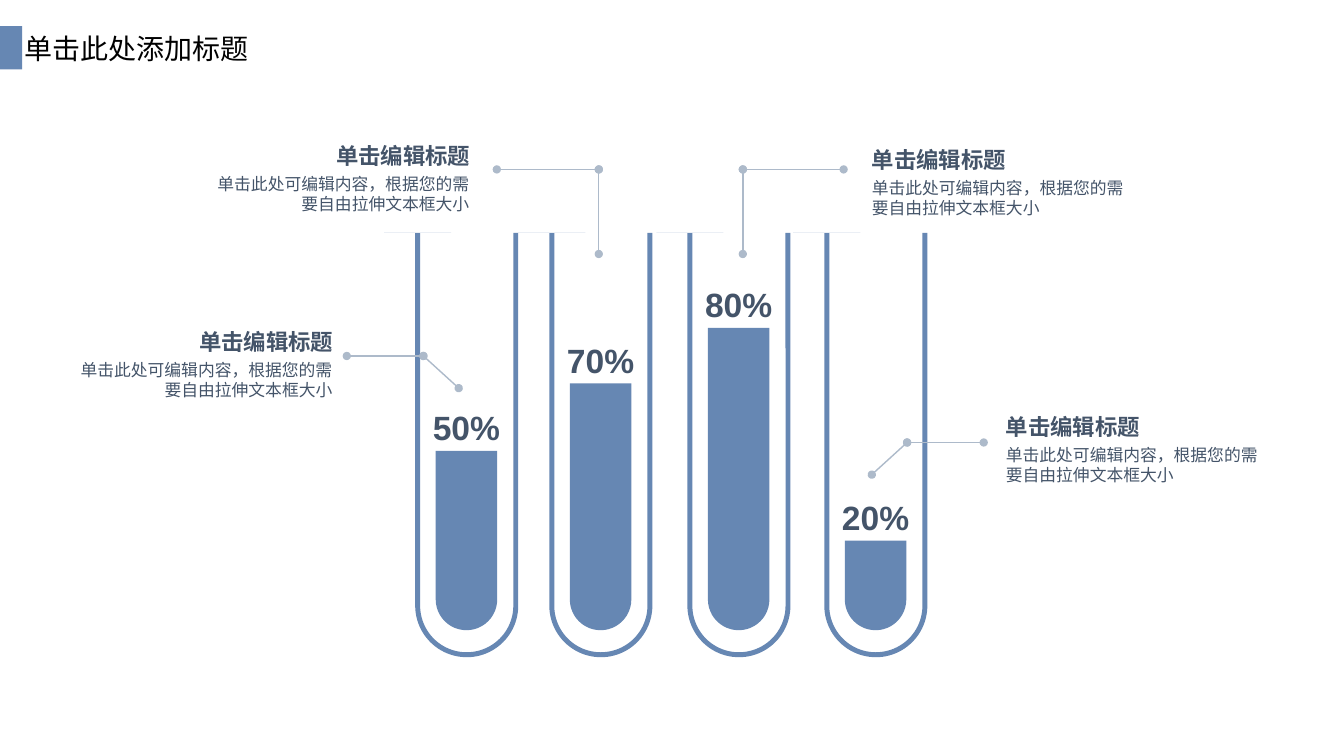
"""Build a slide of four test tubes with percentage levels and callouts."""
import itertools

import lxml.etree
import pptx
import pptx.dml.color
import pptx.enum.shapes
import pptx.enum.text
import pptx.oxml.ns
import pptx.util

Cm = pptx.util.Cm
Pt = pptx.util.Pt
Shape = pptx.enum.shapes.MSO_SHAPE
Align = pptx.enum.text.PP_ALIGN
Anchor = pptx.enum.text.MSO_ANCHOR
qn = pptx.oxml.ns.qn

BLUE, SLATE, GREY, BLACK = "6687B3", "445469", "ADBACA", "000000"
HEADING = "单击编辑标题"
DETAIL = "单击此处可编辑内容，根据您的需要自由拉伸文本框大小"
TUBE_TOP, TUBE_WIDTH, TUBE_HEIGHT = 5.87, 3.38, 10.69
LIQUID_BOTTOM = 15.88

TUBES = [
    (9.68, 4.52, "50%"),
    (13.06, 6.22, "70%"),
    (16.54, 7.62, "80%"),
    (19.99, 2.26, "20%"),
]
CALLOUTS = [
    (1.9, 8.26, Align.RIGHT, [(11.56, 9.78), (10.67, 8.97), (8.74, 8.97)]),
    (25.35, 10.41, Align.LEFT, [(21.97, 11.96), (22.86, 11.15), (24.79, 11.15)]),
    (21.97, 3.68, Align.LEFT, [(18.72, 6.4), (18.72, 4.27), (21.26, 4.27)]),
    (5.35, 3.58, Align.RIGHT, [(15.09, 6.4), (15.09, 4.27), (12.52, 4.27)]),
]


def colour(value):
    return pptx.dml.color.RGBColor.from_string(value)


class TubeSlide:
    """Hold the slide and its style, and draw each kind of element."""

    def __init__(self, slide, font="Arial", title_font="Noto Sans CJK SC"):
        self.slide = slide
        self.font = font
        self.title_font = title_font

    def add_run(self, frame, text, size, ink, align, font, bold=False):
        frame.word_wrap = True
        paragraph = frame.paragraphs[0]
        paragraph.alignment = align
        run = paragraph.add_run()
        run.text = text
        run.font.name = font
        run.font.size = Pt(size)
        run.font.bold = bold
        run.font.color.rgb = colour(ink)
        east_asian = lxml.etree.SubElement(run.font._element, qn("a:ea"))
        east_asian.set("typeface", self.title_font)

    def title(self, text):
        title = self.slide.shapes.title
        title.left, title.top, title.width, title.height = Cm(0.36), Cm(0.66), Cm(6.5), Cm(1.12)
        title.text_frame.vertical_anchor = Anchor.MIDDLE
        self.add_run(title.text_frame, text, 20, BLACK, Align.LEFT, self.title_font)

    def shape(self, kind, left, top, width, height, adjustments=(), rotation=0):
        shape = self.slide.shapes.add_shape(kind, Cm(left), Cm(top), Cm(width), Cm(height))
        shape.shadow.inherit = False
        shape.fill.solid()
        shape.fill.fore_color.rgb = colour(BLUE)
        shape.line.fill.background()
        shape.rotation = rotation
        for index, value in enumerate(adjustments):
            shape.adjustments[index] = value

    def tube(self, left, level):
        self.shape(Shape.U_TURN_ARROW, left, TUBE_TOP, TUBE_WIDTH, TUBE_HEIGHT,
                   (0.037, 0.25, 0, 0.384, 1), 180)
        self.shape(Shape.ROUND_2_SAME_RECTANGLE, left + 1.3, LIQUID_BOTTOM - level, 1.55, level,
                   (0.5, 0), 180)

    def text(self, text, left, top, width, height, size, align, bold=False):
        box = self.slide.shapes.add_textbox(Cm(left), Cm(top), Cm(width), Cm(height))
        frame = box.text_frame
        frame.margin_left = frame.margin_top = frame.margin_right = frame.margin_bottom = 0
        self.add_run(frame, text, size, SLATE, align, self.font, bold)

    def leader(self, points):
        group = self.slide.shapes.add_group_shape()
        for start, end in itertools.pairwise(points):
            connector = group.shapes.add_connector(
                pptx.enum.shapes.MSO_CONNECTOR.STRAIGHT, *map(Cm, start + end))
            connector.line.color.rgb = colour(GREY)
            connector.line.width = Pt(1)
            line = connector.line._get_or_add_ln()
            for tag in ("a:headEnd", "a:tailEnd"):
                lxml.etree.SubElement(line, qn(tag)).set("type", "oval")
            lxml.etree.SubElement(connector._element.spPr, qn("a:effectLst"))

    def callout(self, left, top, align):
        self.text(HEADING, left, top, 6.5, 0.69, 16, align, bold=True)
        self.text(DETAIL, left, top + 0.8, 6.48, 1.02, 12, align)


def main():
    presentation = pptx.Presentation()
    presentation.slide_width, presentation.slide_height = Cm(33.87), Cm(19.05)
    page = TubeSlide(presentation.slides.add_slide(presentation.slide_layouts[5]))
    page.shape(Shape.RECTANGLE, 0, 0.66, 0.56, 1.09)
    page.title("单击此处添加标题")
    for left, level, label in TUBES:
        page.tube(left, level)
    for left, level, label in TUBES:
        page.text(label, left + 0.79, LIQUID_BOTTOM - level - 1.1, 2.57, 1.02, 24,
                  Align.CENTER, bold=True)
    for left, top, align, points in CALLOUTS:
        page.leader(points)
    for left, top, align, points in CALLOUTS:
        page.callout(left, top, align)
    presentation.save("out.pptx")


if __name__ == "__main__":
    main()
